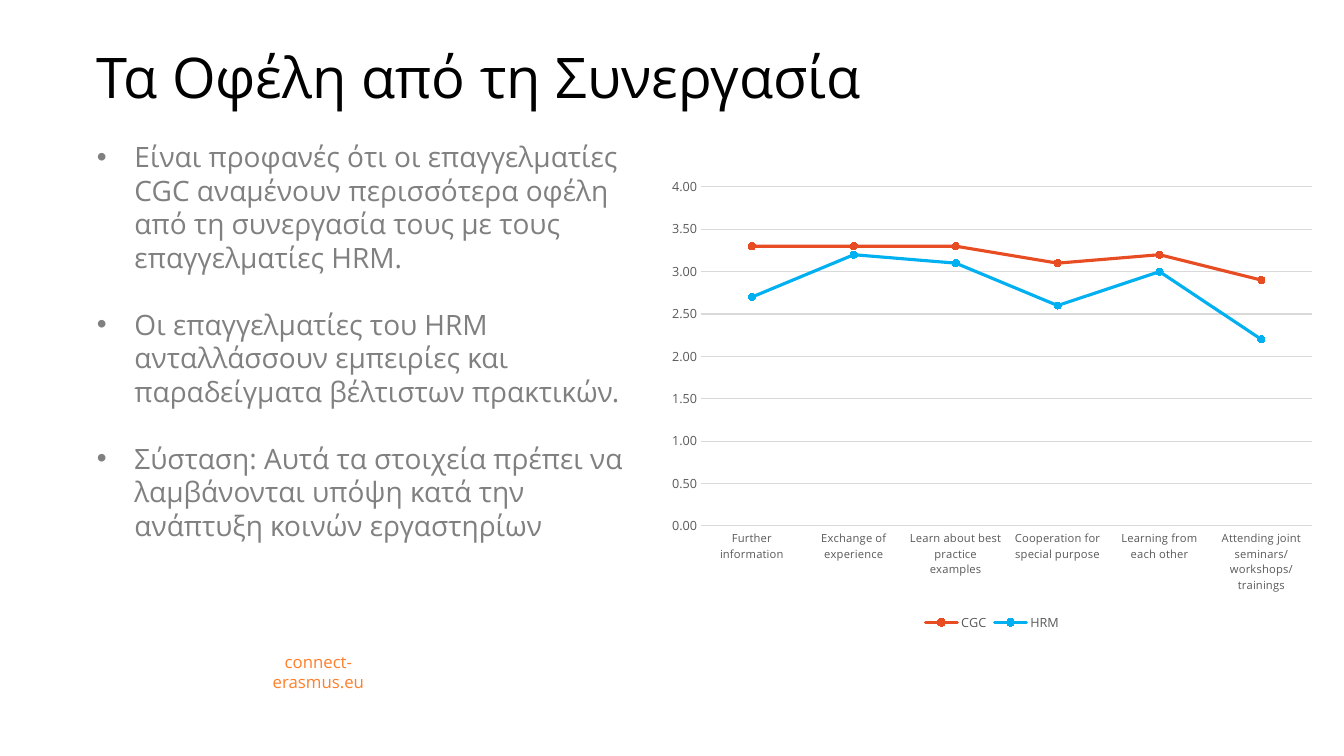
"""Build a slide on the benefits of cooperation, with bullets and a line chart."""
from dataclasses import dataclass

from lxml import etree
from pptx import Presentation
from pptx import util as u
from pptx.chart.data import CategoryChartData
from pptx.dml.color import RGBColor
from pptx.enum import chart as ch
from pptx.enum import text
from pptx.oxml.ns import qn

FONT = "Open Sans"
GREY, RULE = "595959", "D9D9D9"


@dataclass
class Box:
    left: float
    top: float
    width: float
    height: float

    def lengths(self) -> list:
        return [u.Cm(v) for v in (self.left, self.top, self.width, self.height)]


@dataclass
class Style:
    size: float
    color: str


@dataclass
class Series:
    name: str
    color: str
    values: tuple


TITLE = Box(2.18, -1.14, 29.69, 4.06)
BODY = Box(2.19, 3.4, 13.92, 12.29)
SITE = Box(5.79, 16.54, 4.47, 0.76)
CHART = Box(16.6, 4.25, 16.81, 11.76)

BULLETS = (
    "Είναι προφανές ότι οι επαγγελματίες CGC αναμένουν περισσότερα οφέλη από τη "
    "συνεργασία τους με τους επαγγελματίες HRM.",
    "Οι επαγγελματίες του HRM ανταλλάσσουν εμπειρίες και παραδείγματα βέλτιστων πρακτικών.",
    "Σύσταση: Αυτά τα στοιχεία πρέπει να λαμβάνονται υπόψη κατά την ανάπτυξη "
    "κοινών εργαστηρίων",
)
CATEGORIES = (
    "Further information",
    "Exchange of experience",
    "Learn about best practice examples",
    "Cooperation for special purpose",
    "Learning from each other",
    "Attending joint seminars/workshops/trainings",
)
SERIES = (
    Series("CGC", "E84C22", (3.3, 3.3, 3.3, 3.1, 3.2, 2.9)),
    Series("HRM", "00B0F0", (2.7, 3.2, 3.1, 2.6, 3, 2.2)),
)


def rgb(value: str) -> RGBColor:
    return RGBColor.from_string(value)


def apply(obj, formats: dict) -> None:
    for name, value in formats.items():
        setattr(obj, name, value)


def set_font(font, style: Style) -> None:
    apply(font, {"name": FONT, "size": u.Pt(style.size), "bold": False})
    font.color.rgb = rgb(style.color)


def set_line(line, color: str, width: float) -> None:
    line.color.rgb = rgb(color)
    line.width = u.Pt(width)


def add_run(p, content: str, style: Style) -> None:
    r = p.add_run()
    r.text = content
    set_font(r.font, style)


def add_bullet(p) -> None:
    pPr = p._p.get_or_add_pPr()
    pPr.set("marL", str(u.Cm(0.95)))
    pPr.set("indent", str(-u.Cm(0.95)))
    etree.SubElement(pPr, qn("a:buFont")).set("typeface", "Arial")
    etree.SubElement(pPr, qn("a:buChar")).set("char", "•")


def add_box(s, box: Box, anchor):
    tf = s.shapes.add_textbox(*box.lengths()).text_frame
    apply(tf, {"word_wrap": True, "vertical_anchor": anchor})
    return tf


def add_title(s) -> None:
    sp = s.shapes.title
    apply(sp, dict(zip(("left", "top", "width", "height"), TITLE.lengths())))
    tf = sp.text_frame
    apply(tf, {"word_wrap": True, "vertical_anchor": text.MSO_ANCHOR.BOTTOM,
               "auto_size": text.MSO_AUTO_SIZE.NONE})
    p = tf.paragraphs[0]
    apply(p, {"alignment": text.PP_ALIGN.LEFT, "line_spacing": 0.9})
    add_run(p, "Τα Οφέλη από τη Συνεργασία", Style(40, "000000"))


def add_body(s) -> None:
    tf = add_box(s, BODY, text.MSO_ANCHOR.TOP)
    for i, content in enumerate(BULLETS):
        p = tf.add_paragraph() if i else tf.paragraphs[0]
        add_bullet(p)
        apply(p, {"line_spacing": u.Pt(23.9), "space_before": u.Pt(24 if i else 0)})
        add_run(p, content, Style(20, "808080"))


def add_site(s) -> None:
    p = add_box(s, SITE, text.MSO_ANCHOR.MIDDLE).paragraphs[0]
    apply(p, {"alignment": text.PP_ALIGN.CENTER, "line_spacing": u.Pt(14.3)})
    add_run(p, "connect-erasmus.eu", Style(12, "FF7F2A"))


def add_line_chart(s) -> None:
    data = CategoryChartData(number_format="0.0")
    data.categories = CATEGORIES
    for series in SERIES:
        data.add_series(series.name, series.values)
    chart = s.shapes.add_chart(
        ch.XL_CHART_TYPE.LINE_MARKERS, *CHART.lengths(), data).chart
    set_font(chart.font, Style(10, "000000"))
    apply(chart, {"has_title": False, "has_legend": True})
    apply(chart.legend, {"position": ch.XL_LEGEND_POSITION.BOTTOM,
                         "include_in_layout": False})
    set_font(chart.legend.font, Style(9, GREY))

    cat, val = chart.category_axis, chart.value_axis
    for axis, size in ((cat, 8), (val, 9)):
        apply(axis, {"major_tick_mark": ch.XL_TICK_MARK.NONE,
                     "minor_tick_mark": ch.XL_TICK_MARK.NONE})
        set_font(axis.tick_labels.font, Style(size, GREY))
    set_line(cat.format.line, RULE, 0.75)
    apply(val, {"minimum_scale": 0, "maximum_scale": 4, "major_unit": 0.5,
                "has_major_gridlines": True})
    apply(val.tick_labels, {"number_format": "###0.00",
                            "number_format_is_linked": False})
    val.format.line.fill.background()
    set_line(val.major_gridlines.format.line, RULE, 0.75)

    plot = chart.plots[0]
    plot.vary_by_categories = False
    for line, series in zip(plot.series, SERIES):
        line.smooth = False
        set_line(line.format.line, series.color, 2.25)
        line.format.line._get_or_add_ln().set("cap", "rnd")
        apply(line.marker, {"style": ch.XL_MARKER_STYLE.CIRCLE, "size": 5})
        line.marker.format.fill.solid()
        line.marker.format.fill.fore_color.rgb = rgb(series.color)
        set_line(line.marker.format.line, series.color, 0.75)


def main() -> None:
    prs = Presentation()
    apply(prs, {"slide_width": u.Cm(33.87), "slide_height": u.Cm(19.05)})
    s = prs.slides.add_slide(prs.slide_layouts[5])
    add_title(s)
    add_body(s)
    add_site(s)
    add_line_chart(s)
    prs.save("out.pptx")


if __name__ == "__main__":
    main()
